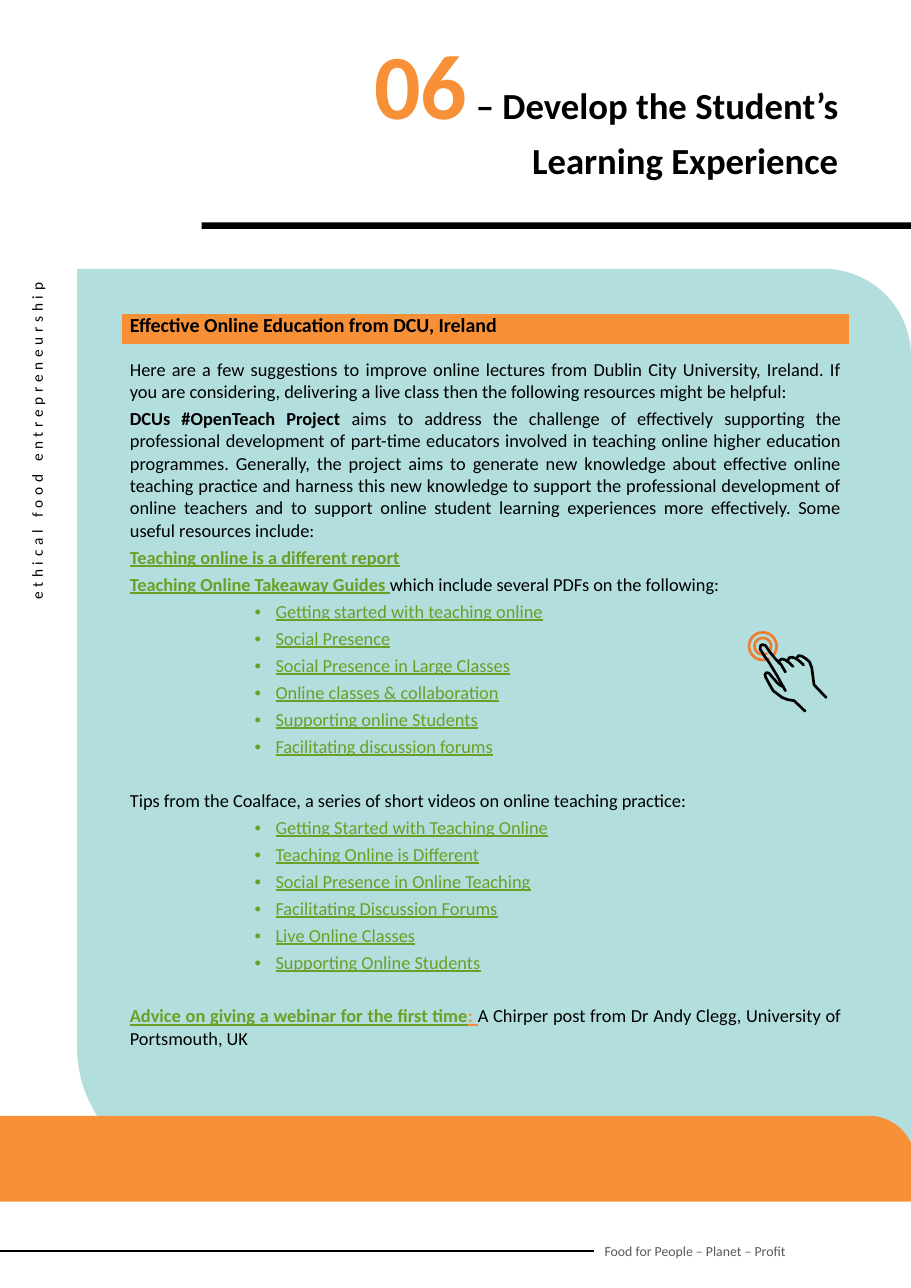
from math import cos, radians, sin

from lxml import etree
from pptx import Presentation
from pptx.dml.color import RGBColor
from pptx.enum.shapes import MSO_CONNECTOR, MSO_SHAPE
from pptx.enum.text import MSO_ANCHOR, PP_ALIGN
from pptx.oxml.ns import qn
from pptx.util import Pt

STRAIGHT, RECTANGLE = MSO_CONNECTOR.STRAIGHT, MSO_SHAPE.RECTANGLE
TOP, MIDDLE = MSO_ANCHOR.TOP, MSO_ANCHOR.MIDDLE
LEFT, RIGHT, JUSTIFY = PP_ALIGN.LEFT, PP_ALIGN.RIGHT, PP_ALIGN.JUSTIFY

FONT = "Calibri"
NO_TABLE_STYLE = "{2D5ABB26-0587-4C30-8999-92F81FD0307C}"
COLORS = {"black": "000000", "grey": "595959", "teal": "B2DEDD",
          "orange": "F79037", "green": "6B9F25", "ring": "ED7D31"}

# Run styles: size, colour, bold, underline
STYLES = {
    "number": (60, "orange", True, False),
    "title": (24, "black", True, False),
    "heading": (13, "black", True, False),
    "plain": (12, "black", False, False),
    "strong": (12, "black", True, False),
    "link": (12, "green", False, True),
    "strong link": (12, "green", True, True),
    "orange link": (12, "orange", True, True),
    "side": (10, "black", False, False),
    "footer": (9, "grey", False, False),
}

# Every text is a list of (words, style) runs
TITLE = [("06", "number"), (" – Develop the Student’s Learning Experience", "title")]
SIDE_TEXT = [("ethical food entrepreneurship", "side")]
FOOTER = [("Food for People – Planet – Profit", "footer")]
HEADING = [("Effective Online Education from DCU, Ireland", "heading")]
INTRO = [
    [("Here are a few suggestions to improve online lectures from Dublin City University, "
      "Ireland. If you are considering, delivering a live class then the following resources "
      "might be helpful:", "plain")],
    [("DCUs #OpenTeach Project ", "strong"),
     ("aims to address the challenge of effectively supporting the professional development of "
      "part-time educators involved in teaching online higher education programmes. Generally, "
      "the project aims to generate new knowledge about effective online teaching practice and "
      "harness this new knowledge to support the professional development of online teachers and "
      "to support online student learning experiences more effectively. Some useful resources "
      "include:", "plain")],
    [("Teaching online is a different report", "strong link")],
    [("Teaching Online Takeaway Guides ", "strong link"),
     ("which include several PDFs on the following:", "plain")],
]
GUIDES = ["Getting started with teaching online", "Social Presence",
          "Social Presence in Large Classes", "Online classes & collaboration",
          "Supporting online Students", "Facilitating discussion forums"]
TIPS = [("Tips from the Coalface, a series of short videos on online teaching practice:", "plain")]
VIDEOS = ["Getting Started with Teaching Online", "Teaching Online is Different",
          "Social Presence in Online Teaching", "Facilitating Discussion Forums",
          "Live Online Classes", "Supporting Online Students"]
ADVICE = [("Advice on giving a webinar for the first time", "strong link"), (": ", "orange link"),
          ("A Chirper post from Dr Andy Clegg, University of Portsmouth, UK", "plain")]

# Hand icon: one stroke for each part
HAND = {
    "index finger": [(513.4, 451.4), (509.8, 445), (508.3, 442.1), (502.6, 432.7), (499.7, 428.8),
                     (496.8, 424.1), (497.2, 421.9), (498.2, 421.2), (500.4, 421.9),
                     (503.3, 426.2), (506.9, 430.6), (510.5, 434.2), (513.4, 439.2)],
    "thumb": [(512.3, 448.9), (509.8, 447.8), (507.6, 445.7), (502.6, 439.9), (501.1, 439.6),
              (500, 440.6), (500.4, 442.4), (502.9, 447.1), (505.4, 451.4), (508.3, 453.6),
              (511.2, 455.8), (514.8, 457.2), (519.1, 457.9), (526.3, 464.8)],
    "middle finger": [(509, 433.4), (509.8, 431.3), (511.2, 430.6), (513.4, 431.3),
                      (516.2, 433.4), (518.4, 435.6)],
    "ring finger": [(514.8, 432), (515.9, 429.8), (517.7, 429.5), (519.8, 430.2), (522, 431.6),
                    (525.2, 434.5)],
    "little finger": [(520.6, 430.2), (522, 428.4), (524.2, 428.8), (527, 430.6), (529.2, 432.7),
                      (530.6, 436.3), (532.1, 447.5), (540, 455.8)],
}
TAP_CENTER = (498.6, 422.3)
TAP_RADII = (9, 5.4)
TAP_GAP = (45, 65)  # angles between which the finger interrupts the rings

# Layout in points; panels are left, top, right, bottom
SLIDE_W, SLIDE_H = 595.44, 841.68
PANEL, PANEL_TOP_RADIUS, PANEL_BOTTOM_RADIUS = (50.4, 175.7, SLIDE_W, 767.5), 57, 83.2
BAND, BAND_RADIUS = (0, 729.2, 598.3, 785.2), 30.6
TITLE_BOX = (174.2, 18, 380.9, 92)
BAR_X, BAR_Y, BAR_H = 131.8, 145.3, 4.3
SIDE_X, SIDE_TOP, SIDE_LENGTH, SIDE_H = 24.1, 177.8, 240, 19.4
FOOTER_X, FOOTER_Y, FOOTER_W, FOOTER_H = 388.1, 817.5, 134.6, 28.8
TABLE_X, TABLE_Y, TABLE_W = 79.9, 205.2, 475.2
HEAD_H, BODY_H, BODY_MARGIN = 19.8, 521, 9.4
BULLET_INDENT, BULLET_HANG = 95.2, 13.7
PARAGRAPH_GAP, SECTION_GAP = 3, 17.6


def color(name):
    return RGBColor.from_string(COLORS[name])


def arc(cx, cy, radius, start, end, steps=32):
    """Points on a circle; angles run clockwise from the right."""
    angles = [radians(start + (end - start) * i / steps) for i in range(steps + 1)]
    return [(cx + radius * cos(a), cy + radius * sin(a)) for a in angles]


def fill_plain(sp, name):
    sp.shadow.inherit = False
    sp.fill.solid()
    sp.fill.fore_color.rgb = color(name)
    sp.line.fill.background()


def freeform(points, close):
    pts = [(Pt(x), Pt(y)) for x, y in points]
    builder = s.shapes.build_freeform(*pts[0], scale=1.0)
    builder.add_line_segments(pts[1:], close=close)
    return builder.convert_to_shape()


def draw_stroke(points, name):
    """An open line with round ends."""
    sp = freeform(points, close=False)
    sp.shadow.inherit = False
    sp.fill.background()
    sp.line.color.rgb, sp.line.width = color(name), Pt(1.75)
    sp.element.spPr.get_or_add_ln().set("cap", "rnd")


def draw_panel(box, name, top_radius, bottom_radius=0):
    """A panel rounded at its top right and, if asked, its bottom left corner."""
    left, top, right, bottom = box
    top_right = arc(right - top_radius, top + top_radius, top_radius, -90, 0)
    bottom_left = [(left, bottom)]
    if bottom_radius:
        bottom_left = arc(left + bottom_radius, bottom - bottom_radius, bottom_radius, 90, 180)
    points = [(left, top)] + top_right + [(right, bottom)] + bottom_left
    fill_plain(freeform(points, close=True), name)


def write(p, runs, align=LEFT):
    p.alignment = align
    for text, style in runs:
        size, name, bold, underline = STYLES[style]
        r = p.add_run()
        r.text = text
        r.font.name, r.font.size = FONT, Pt(size)
        r.font.bold, r.font.underline = bold, underline
        r.font.color.rgb = color(name)


def text_box(x, y, w, h, runs, align=LEFT, anchor=TOP):
    sp = s.shapes.add_textbox(Pt(x), Pt(y), Pt(w), Pt(h))
    tf = sp.text_frame
    tf.word_wrap, tf.vertical_anchor = True, anchor
    tf.margin_top = tf.margin_bottom = 0
    write(tf.paragraphs[0], runs, align)
    return sp


def add_bullet(p):
    pPr = p._p.get_or_add_pPr()
    pPr.set("marL", str(Pt(BULLET_INDENT)))
    pPr.set("indent", str(Pt(-BULLET_HANG)))
    etree.SubElement(pPr, qn("a:buFont"), typeface="Arial")
    etree.SubElement(pPr, qn("a:buChar"), char="•")


prs = Presentation()
prs.slide_width, prs.slide_height = Pt(SLIDE_W), Pt(SLIDE_H)
s = prs.slides.add_slide(prs.slide_layouts[6])

# Footer: a rule that ends where the text begins
text_box(FOOTER_X, FOOTER_Y - FOOTER_H / 2, FOOTER_W, FOOTER_H, FOOTER, anchor=MIDDLE)
rule = s.shapes.add_connector(STRAIGHT, 0, Pt(FOOTER_Y), Pt(FOOTER_X), Pt(FOOTER_Y))
rule.line.color.rgb, rule.line.width = color("black"), Pt(1.5)
etree.SubElement(rule.element.spPr, qn("a:effectLst"))

draw_panel(PANEL, "teal", PANEL_TOP_RADIUS, PANEL_BOTTOM_RADIUS)
draw_panel(BAND, "orange", BAND_RADIUS)

# Side text: placed flat around its centre, then turned to read upwards
side = text_box(SIDE_X - SIDE_LENGTH / 2, SIDE_TOP + (SIDE_LENGTH - SIDE_H) / 2,
                SIDE_LENGTH, SIDE_H, SIDE_TEXT, RIGHT, MIDDLE)
side.rotation = 270
side.text_frame.paragraphs[0].runs[0].font._element.set("spc", "310")

# Title and the bar under it
text_box(*TITLE_BOX, TITLE, RIGHT)
bar = s.shapes.add_shape(RECTANGLE, Pt(BAR_X), Pt(BAR_Y), Pt(SLIDE_W - BAR_X), Pt(BAR_H))
fill_plain(bar, "black")

# Resources table
table = s.shapes.add_table(2, 1, Pt(TABLE_X), Pt(TABLE_Y), Pt(TABLE_W), Pt(HEAD_H + BODY_H)).table
table.first_row = table.horz_banding = False
table._tbl.tblPr.find(qn("a:tableStyleId")).text = NO_TABLE_STYLE
head, body = table.cell(0, 0), table.cell(1, 0)
for row, cell, height, margin in zip(table.rows, (head, body), (HEAD_H, BODY_H), (0, BODY_MARGIN)):
    row.height = Pt(height)
    cell.margin_left = cell.margin_right = Pt(5)
    cell.margin_top, cell.margin_bottom = Pt(margin), 0
head.fill.solid()
head.fill.fore_color.rgb = color("orange")
body.fill.background()
write(head.text_frame.paragraphs[0], HEADING)

# Body entries: runs, bulleted or not, space before
entries = [(runs, False, 0) for runs in INTRO]
for links, closing in ((GUIDES, TIPS), (VIDEOS, ADVICE)):
    entries += [([(link, "link")], True, 0) for link in links]
    entries.append((closing, False, SECTION_GAP))
for i, (runs, bulleted, gap) in enumerate(entries):
    p = body.text_frame.add_paragraph() if i else body.text_frame.paragraphs[0]
    write(p, runs, LEFT if bulleted else JUSTIFY)
    p.space_before, p.space_after = Pt(gap), Pt(PARAGRAPH_GAP)
    if bulleted:
        add_bullet(p)

# Tapping hand: each ring runs from the end of the gap round to its start
gap_start, gap_end = TAP_GAP
for radius in TAP_RADII:
    draw_stroke(arc(*TAP_CENTER, radius, gap_end, gap_start + 360), "ring")
for points in HAND.values():
    draw_stroke(points, "black")

prs.save("out.pptx")
